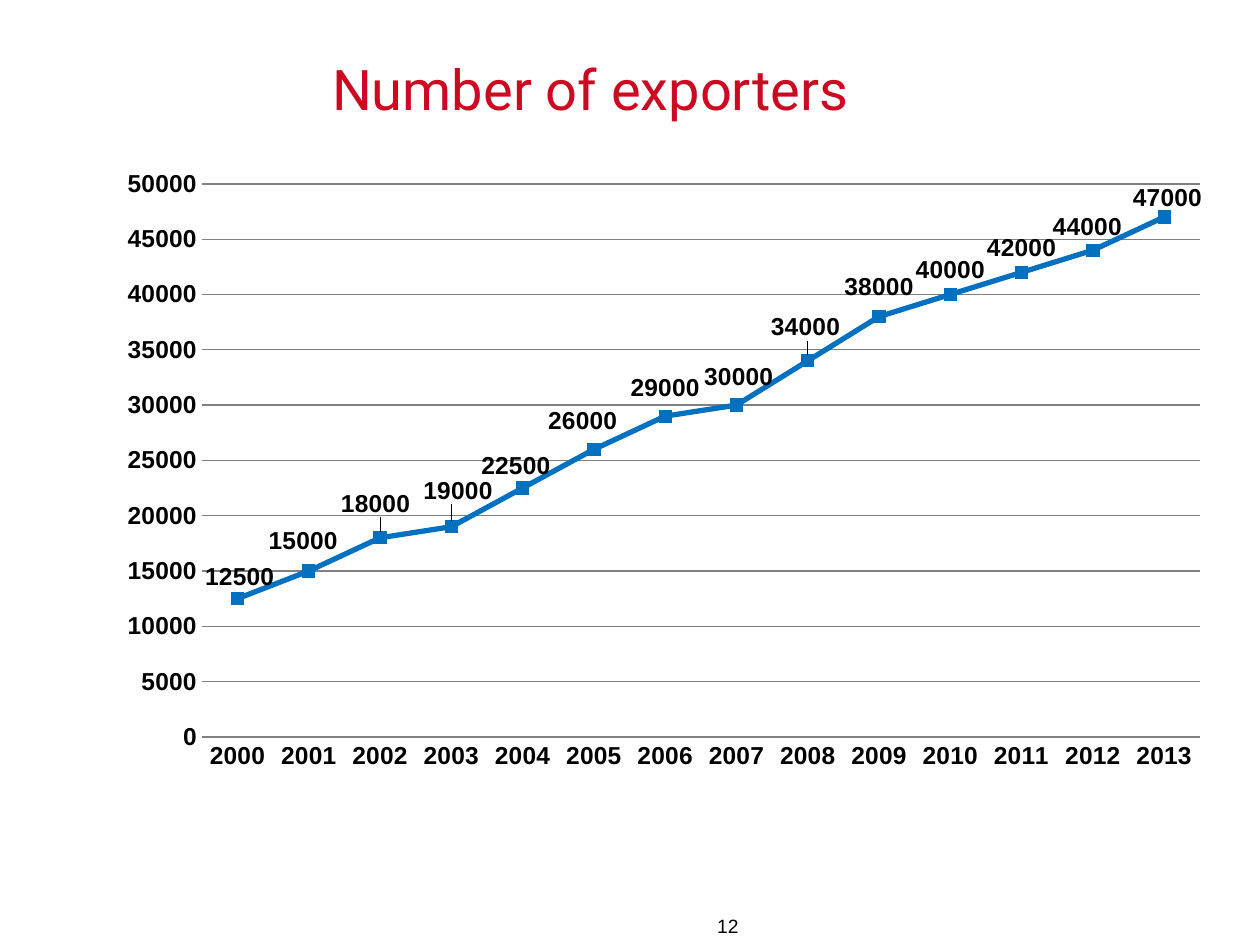
from dataclasses import dataclass
from typing import NamedTuple

from lxml.etree import SubElement
from pptx import Presentation
from pptx.chart.data import CategoryChartData
from pptx.dml.color import RGBColor as RGB
from pptx.enum.chart import XL_CHART_TYPE as ChartType
from pptx.enum.chart import XL_LABEL_POSITION as LabelPos
from pptx.enum.chart import XL_MARKER_STYLE as Marker
from pptx.enum.chart import XL_TICK_MARK as Tick
from pptx.enum.text import MSO_ANCHOR as Anchor
from pptx.enum.text import PP_ALIGN as Align
from pptx.oxml import parse_xml
from pptx.oxml.ns import nsdecls, qn
from pptx.util import Cm, Pt


@dataclass(frozen=True)
class Theme:
    title_font: str = "Roboto"
    body_font: str = "Arial"
    title_color: RGB = RGB(0xCD, 0x09, 0x21)
    text_color: RGB = RGB(0, 0, 0)
    line_color: RGB = RGB(0x00, 0x70, 0xC0)
    grid_color: RGB = RGB(0x80, 0x80, 0x80)
    title_size: Pt = Pt(32)
    chart_size: Pt = Pt(14)
    number_size: Pt = Pt(11)


class Reading(NamedTuple):
    """Exporters in a year; label shift in percent of the chart size."""
    year: int
    exporters: int
    dx: float = 0
    dy: float = 0


THEME = Theme()
READINGS = [
    Reading(2000, 12500, 0.2, 0.5),
    Reading(2001, 15000, -0.5, -0.8),
    Reading(2002, 18000, -0.4, -1.4),
    Reading(2003, 19000, 0.6, -1.8),
    Reading(2004, 22500, -0.6, 0.5),
    Reading(2005, 26000, -1, -0.5),
    Reading(2006, 29000, 0, -0.6),
    Reading(2007, 30000, 0.2, -0.6),
    Reading(2008, 34000, -0.2, -1.4),
    Reading(2009, 38000, 0, -0.8),
    Reading(2010, 40000),
    Reading(2011, 42000),
    Reading(2012, 44000, -0.5, 0.3),
    Reading(2013, 47000, 0.3, 1),
]


def style_text(tf, text: str, align, font: str, size, color: RGB) -> None:
    tf.text = text
    tf.word_wrap = True
    tf.vertical_anchor = Anchor.TOP
    p = tf.paragraphs[0]
    p.alignment = align
    r = p.runs[0]
    r.font.name, r.font.size = font, size
    r.font.color.rgb = color


def manual_layout(**settings):
    layout = parse_xml(f"<c:layout {nsdecls('c')}/>")
    manual = SubElement(layout, qn("c:manualLayout"))
    for name, value in settings.items():
        SubElement(manual, qn(f"c:{name}")).set("val", str(value))
    return layout


def style_font(font) -> None:
    font.name, font.size, font.bold = THEME.body_font, THEME.chart_size, True
    font.color.rgb = THEME.text_color


def style_line(line, color: RGB, width) -> None:
    line.color.rgb = color
    line.width = width


def add_exporter_chart(slide, readings: list[Reading]) -> None:
    data = CategoryChartData()
    data.categories = [str(reading.year) for reading in readings]
    data.add_series("Series 1", [reading.exporters for reading in readings])
    chart = slide.shapes.add_chart(ChartType.LINE_MARKERS, Cm(2.11), Cm(3.18),
                                   Cm(22.53), Cm(12.57), data).chart
    chart.has_legend = chart.has_title = False
    style_font(chart.font)

    # Plot area
    plot_area = chart.plots[0]._element.getparent()
    for old in plot_area.findall(qn("c:layout")):
        plot_area.remove(old)
    plot_area.insert(0, manual_layout(
        layoutTarget="inner", xMode="edge", yMode="edge",
        x=0.087, y=0.042, w=0.893, h=0.887))

    # Axes
    years, counts = chart.category_axis, chart.value_axis
    for axis in (years, counts):
        axis.major_tick_mark = axis.minor_tick_mark = Tick.NONE
    style_line(years.format.line, THEME.grid_color, Pt(0.75))
    counts.minimum_scale, counts.maximum_scale = 0, 50000
    counts.major_unit = 5000
    counts.format.line.fill.background()
    style_line(counts.major_gridlines.format.line, THEME.grid_color, Pt(0.75))

    # Line and markers
    chart.plots[0].vary_by_categories = False
    series = chart.plots[0].series[0]
    series.smooth = False
    style_line(series.format.line, THEME.line_color, Pt(3))
    series.marker.style, series.marker.size = Marker.SQUARE, 7
    fill = series.marker.format.fill
    fill.solid()
    fill.fore_color.rgb = THEME.line_color
    style_line(series.marker.format.line, THEME.line_color, Pt(0.75))

    # Value labels, nudged one by one
    labels = series.data_labels
    labels.show_value, labels.position = True, LabelPos.ABOVE
    style_font(labels.font)
    for i, reading in enumerate(readings):
        label = series.points[i].data_label
        label.position = LabelPos.ABOVE
        style_font(label.font)
    for item, reading in zip(labels._element.findall(qn("c:dLbl")), readings):
        item.insert(1, manual_layout(x=reading.dx / 100, y=reading.dy / 100))


def main() -> None:
    prs = Presentation()
    prs.slide_width, prs.slide_height = Cm(25.4), Cm(19.05)
    s = prs.slides.add_slide(prs.slide_layouts[5])

    # Title
    title = s.shapes.title
    title.left, title.top = Cm(1.68), Cm(1.12)
    title.width, title.height = Cm(20.45), Cm(2.34)
    style_text(title.text_frame, "Number of exporters", Align.CENTER,
               THEME.title_font, THEME.title_size, THEME.title_color)
    title.text_frame.paragraphs[0].line_spacing = 0.9

    add_exporter_chart(s, READINGS)

    # Slide number
    number = s.shapes.add_textbox(Cm(10.31), Cm(18.31), Cm(4.83), Cm(0.74))
    style_text(number.text_frame, "12", Align.RIGHT,
               THEME.body_font, THEME.number_size, THEME.text_color)

    prs.save("out.pptx")


if __name__ == "__main__":
    main()
